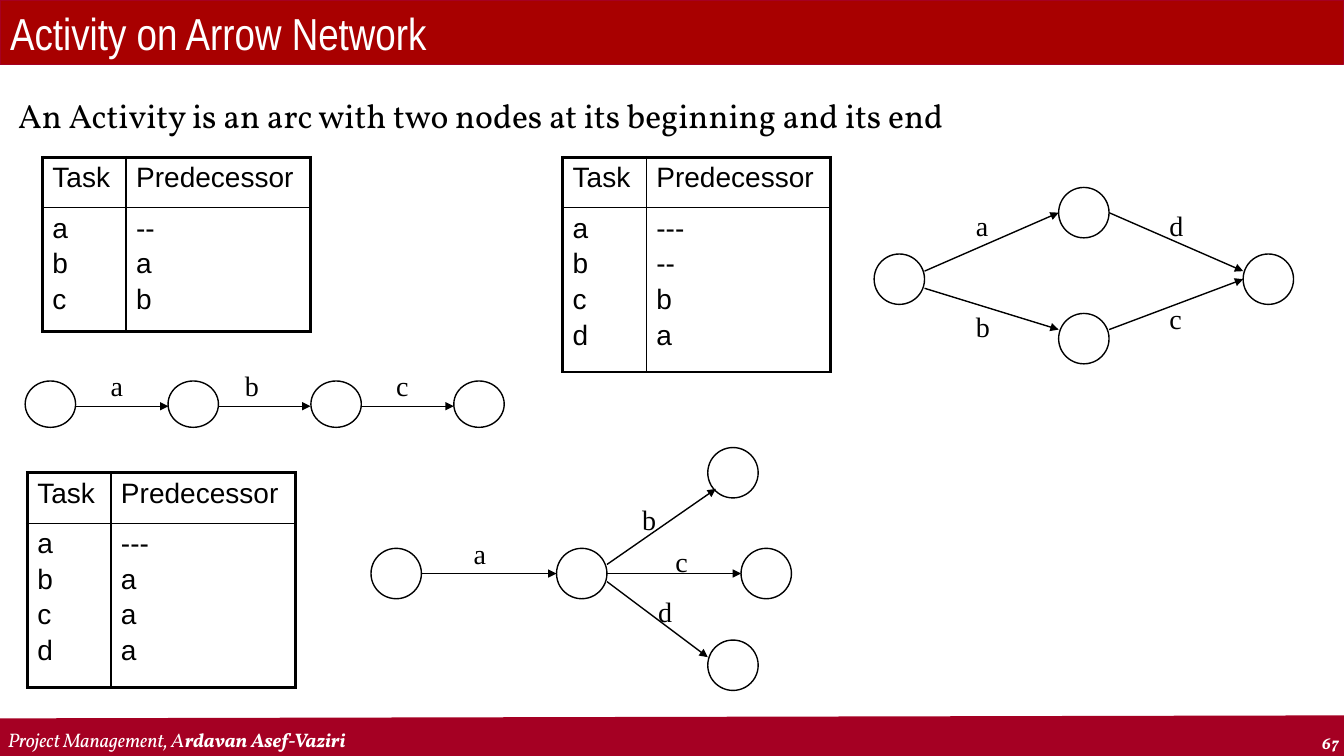
from lxml.etree import SubElement
from pptx import Presentation
from pptx.dml.color import RGBColor
from pptx.enum.shapes import MSO_CONNECTOR as Connector, MSO_SHAPE as Preset
from pptx.enum.text import MSO_ANCHOR as Anchor, MSO_AUTO_SIZE as AutoSize, PP_ALIGN as Align
from pptx.oxml import parse_xml
from pptx.oxml.ns import nsdecls, qn
from pptx.util import Inches, Pt

BLACK, WHITE, RED, DARK_RED = "000000", "FFFFFF", "A80000", "A50023"


def add_run(paragraph, text, size, font, color=BLACK, bold=False, italic=False):
    run = paragraph.add_run()
    run.text = text
    run.font.size = Pt(size)
    run.font.name = font
    run.font.bold = bold
    run.font.italic = italic
    run.font.color.rgb = RGBColor.from_string(color)


def add_line(start, end, color, width):
    line = slide.shapes.add_connector(
        Connector.STRAIGHT, *[Inches(value) for value in (*start, *end)])
    line.line.color.rgb = RGBColor.from_string(color)
    line.line.width = Pt(width)
    SubElement(line._element.spPr, qn("a:effectLst"))
    return line


presentation = Presentation()
presentation.slide_width = Inches(13.33)
presentation.slide_height = Inches(7.5)
slide = presentation.slides.add_slide(presentation.slide_layouts[1])

# Title bar, behind the title
bar = slide.shapes.add_shape(
    Preset.RECTANGLE, Inches(0), Inches(-0.01), Inches(13.33), Inches(0.64))
bar.shadow.inherit = False
bar.fill.solid()
bar.fill.fore_color.rgb = RGBColor.from_string(RED)
bar.line.color.rgb = RGBColor.from_string(RED)
bar.line.width = Pt(0.75)
slide.shapes._spTree.insert(2, bar._element)

# Title and statement
title, statement = slide.placeholders
title.line.color.rgb = RGBColor.from_string(DARK_RED)
title.line.width = Pt(0.75)
for placeholder, left, top, width, anchor, text, size, font, color in [
    (title, 0, 0, 13.33, Anchor.MIDDLE,
     "Activity on Arrow Network", 32, "Arial Narrow", WHITE),
    (statement, 0.08, 0.89, 11.25, Anchor.TOP,
     "An Activity is an arc with two nodes at its beginning and its end",
     24, "Vollkorn", BLACK),
]:
    placeholder.left, placeholder.top = Inches(left), Inches(top)
    placeholder.width, placeholder.height = Inches(width), Inches(0.64)
    frame = placeholder.text_frame
    frame.auto_size = AutoSize.NONE
    frame.vertical_anchor = anchor
    paragraph = frame.paragraphs[0]
    paragraph.alignment = Align.LEFT
    add_run(paragraph, text, size, font, color)
paragraph.space_before = Pt(2)
properties = paragraph._p.get_or_add_pPr()
properties.set("marL", str(Inches(0.38)))
properties.set("indent", str(Inches(-0.38)))
SubElement(properties, qn("a:buNone"))

# Footer
add_line((-0.01, 7.33), (13.36, 7.3), DARK_RED, 29.25)
for left, top, width, height, anchor, alignment, size, runs in [
    (12.38, 7.22, 1, 0.3, Anchor.TOP, Align.RIGHT, 12, [("67", True)]),
    (-0.02, 7.16, 10.45, 0.34, Anchor.BOTTOM, Align.LEFT, 14,
     [("Project Management, A", False), ("rdavan Asef-Vaziri", True)]),
]:
    box = slide.shapes.add_textbox(Inches(left), Inches(top), Inches(width), Inches(height))
    box.text_frame.word_wrap = True
    box.text_frame.vertical_anchor = anchor
    paragraph = box.text_frame.paragraphs[0]
    paragraph.alignment = alignment
    for text, bold in runs:
        add_run(paragraph, text, size, "Vollkorn", WHITE, bold, italic=True)

# Task tables: left, top, body height, predecessors of a, b, c, ...
for left, top, body_height, predecessors in [
    (0.42, 1.56, 1.23, ["--", "a", "b"]),
    (5.58, 1.56, 1.63, ["---", "--", "b", "a"]),
    (0.27, 4.69, 1.63, ["---", "a", "a", "a"]),
]:
    table = slide.shapes.add_table(
        2, 2, Inches(left), Inches(top), Inches(2.66), Inches(0.5 + body_height)).table
    table.first_row = table.horz_banding = False
    table.columns[0].width, table.columns[1].width = Inches(0.83), Inches(1.83)
    table.rows[0].height, table.rows[1].height = Inches(0.5), Inches(body_height)
    tasks = list("abcd")[:len(predecessors)]
    contents = [[["Task"], ["Predecessor"]], [tasks, predecessors]]
    for row in range(2):
        for column in range(2):
            cell = table.cell(row, column)
            cell.fill.background()
            for index, text in enumerate(contents[row][column]):
                frame = cell.text_frame
                paragraph = frame.add_paragraph() if index else frame.paragraphs[0]
                paragraph.space_before = Pt(3.2 if index else 0)
                add_run(paragraph, text, 20, "Arial")
            outer_sides = {"L": column == 0, "R": column == 1, "T": row == 0, "B": row == 1}
            for position, (side, outer) in enumerate(outer_sides.items()):
                border = parse_xml(
                    f'<a:ln{side} {nsdecls("a")} w="{Pt(2.25 if outer else 1)}">'
                    f'<a:solidFill><a:srgbClr val="{BLACK}"/></a:solidFill></a:ln{side}>')
                cell._tc.get_or_add_tcPr().insert(position, border)

# Nodes: left, top, height
chain_nodes = [(0.25 + 1.417 * step, 3.78, 0.46) for step in range(4)]
diamond_nodes = [(8.67, 2.52, 0.5), (10.5, 1.86, 0.5), (10.5, 3.11, 0.5), (12.33, 2.52, 0.5)]
fork_nodes = [(3.68, 5.44, 0.5), (5.52, 5.44, 0.5), (7.02, 4.44, 0.5),
              (7.35, 5.44, 0.5), (7.02, 6.35, 0.5)]
for left, top, height in chain_nodes + diamond_nodes + fork_nodes:
    node = slide.shapes.add_shape(
        Preset.OVAL, Inches(left), Inches(top), Inches(0.5), Inches(height))
    node.shadow.inherit = False
    node.fill.background()
    node.line.color.rgb = RGBColor.from_string(BLACK)
    node.line.width = Pt(1)

# Activities: name, arrow start, arrow end, label corner
activities = [
    ("a", (0.75, 4.03), (1.67, 4.03), (1, 3.61)),
    ("b", (2.17, 4.03), (3.08, 4.03), (2.33, 3.61)),
    ("c", (3.58, 4.03), (4.5, 4.03), (3.83, 3.61)),
    ("a", (9.17, 2.69), (10.5, 2.11), (9.58, 2.02)),
    ("b", (9.17, 2.86), (10.5, 3.27), (9.58, 3.02)),
    ("c", (11, 3.27), (12.33, 2.77), (11.5, 2.94)),
    ("d", (11, 2.11), (12.33, 2.69), (11.5, 2.02)),
    ("a", (4.18, 5.69), (5.52, 5.69), (4.6, 5.27)),
    ("b", (6.02, 5.6), (7.1, 4.85), (6.27, 4.94)),
    ("c", (6.02, 5.69), (7.35, 5.69), (6.6, 5.35)),
    ("d", (6.02, 5.77), (7.02, 6.52), (6.43, 5.85)),
]
for name, start, end, (left, top) in activities:
    arrow = add_line(start, end, BLACK, 1)
    SubElement(arrow.line._get_or_add_ln(), qn("a:tailEnd"), type="triangle")
    label = slide.shapes.add_textbox(Inches(left), Inches(top), Inches(0.33), Inches(0.43))
    label.text_frame.word_wrap = True
    add_run(label.text_frame.paragraphs[0], name, 20, "Times New Roman")

presentation.save("out.pptx")
